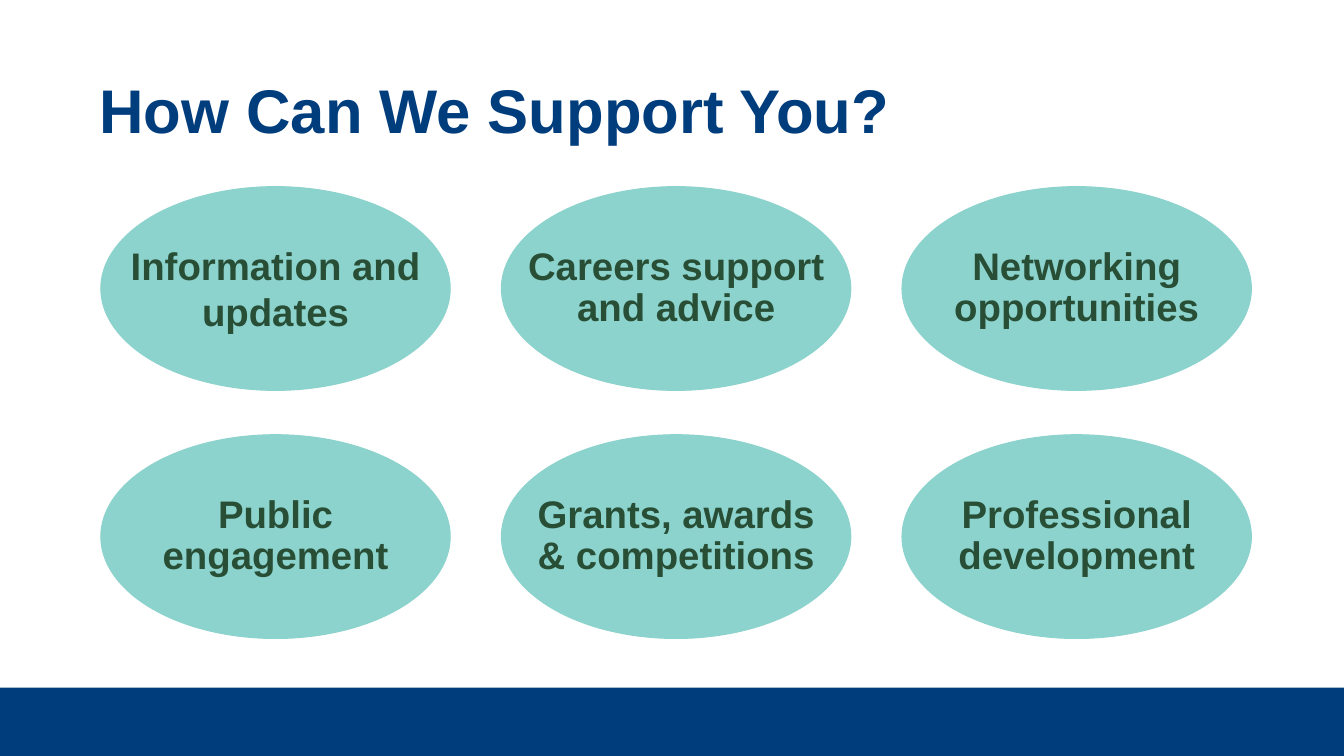
"""Build the slide listing six ways of supporting members."""
from dataclasses import dataclass

from pptx import Presentation
from pptx.dml.color import RGBColor
from pptx.enum.shapes import MSO_SHAPE as SHAPE
from pptx.enum.text import MSO_ANCHOR as ANCHOR, PP_ALIGN as ALIGN
from pptx.util import Inches, Pt

TITLE = "How Can We Support You?"
SUPPORT = [
    ["Information and\vupdates", "Careers support\vand advice", "Networking\vopportunities"],
    ["Public\vengagement", "Grants, awards\v& competitions", "Professional\vdevelopment"],
]
LINE_SPACING = {"Information and\vupdates": 1.0}


@dataclass(frozen=True)
class Theme:
    """Colours, font and type sizes."""
    navy: RGBColor = RGBColor.from_string("003D7D")
    teal: RGBColor = RGBColor.from_string("8CD3CD")
    green: RGBColor = RGBColor.from_string("284E36")
    font: str = "Arial"
    title_size: float = 64.2
    label_size: float = 40
    spacing: float = 0.9


THEME = Theme()
SLIDE_W, SLIDE_H = 19.46, 10.94
FOOTER_TOP = 9.95
GRID_LEFT, GRID_TOP = 1.46, 2.7
OVAL_W, OVAL_H = 5.06, 2.95
STEP_X, STEP_Y = 5.8, 3.59


def write(sp, text, size, color, align, spacing):
    """Put one styled, vertically centred paragraph in a shape."""
    tf = sp.text_frame
    tf.vertical_anchor = ANCHOR.MIDDLE
    p = tf.paragraphs[0]
    p.text = text
    p.alignment = align
    p.line_spacing = spacing
    p.font.name, p.font.size, p.font.bold = THEME.font, Pt(size), True
    p.font.color.rgb = color
    return tf


def add_shape(s, kind, x, y, w, h, color):
    """Add a flat shape filled and outlined in one colour."""
    sp = s.shapes.add_shape(kind, Inches(x), Inches(y), Inches(w), Inches(h))
    sp.shadow.inherit = False
    sp.fill.solid()
    sp.fill.fore_color.rgb = color
    sp.line.color.rgb = color
    sp.line.width = Pt(1)
    return sp


def add_oval(s, row, col, label):
    """Add a labelled oval at its place in the grid."""
    sp = add_shape(s, SHAPE.OVAL, GRID_LEFT + col * STEP_X, GRID_TOP + row * STEP_Y,
                   OVAL_W, OVAL_H, THEME.teal)
    tf = write(sp, label, THEME.label_size, THEME.green, ALIGN.CENTER,
               LINE_SPACING.get(label, THEME.spacing))
    tf.word_wrap = False
    tf.margin_left = tf.margin_right = tf.margin_top = tf.margin_bottom = 0


def main():
    """Build and save the slide."""
    prs = Presentation()
    prs.slide_width, prs.slide_height = Inches(SLIDE_W), Inches(SLIDE_H)
    s = prs.slides.add_slide(prs.slide_layouts[6])
    footer = add_shape(s, SHAPE.RECTANGLE, 0, FOOTER_TOP, SLIDE_W, SLIDE_H - FOOTER_TOP,
                       THEME.navy)
    footer.line.fill.background()
    title = s.shapes.add_textbox(Inches(1.34), Inches(0.58), Inches(16.78), Inches(2.12))
    write(title, TITLE, THEME.title_size, THEME.navy, ALIGN.LEFT,
          THEME.spacing).word_wrap = True
    for row, labels in enumerate(SUPPORT):
        for col, label in enumerate(labels):
            add_oval(s, row, col, label)
    prs.save("out.pptx")


if __name__ == "__main__":
    main()
